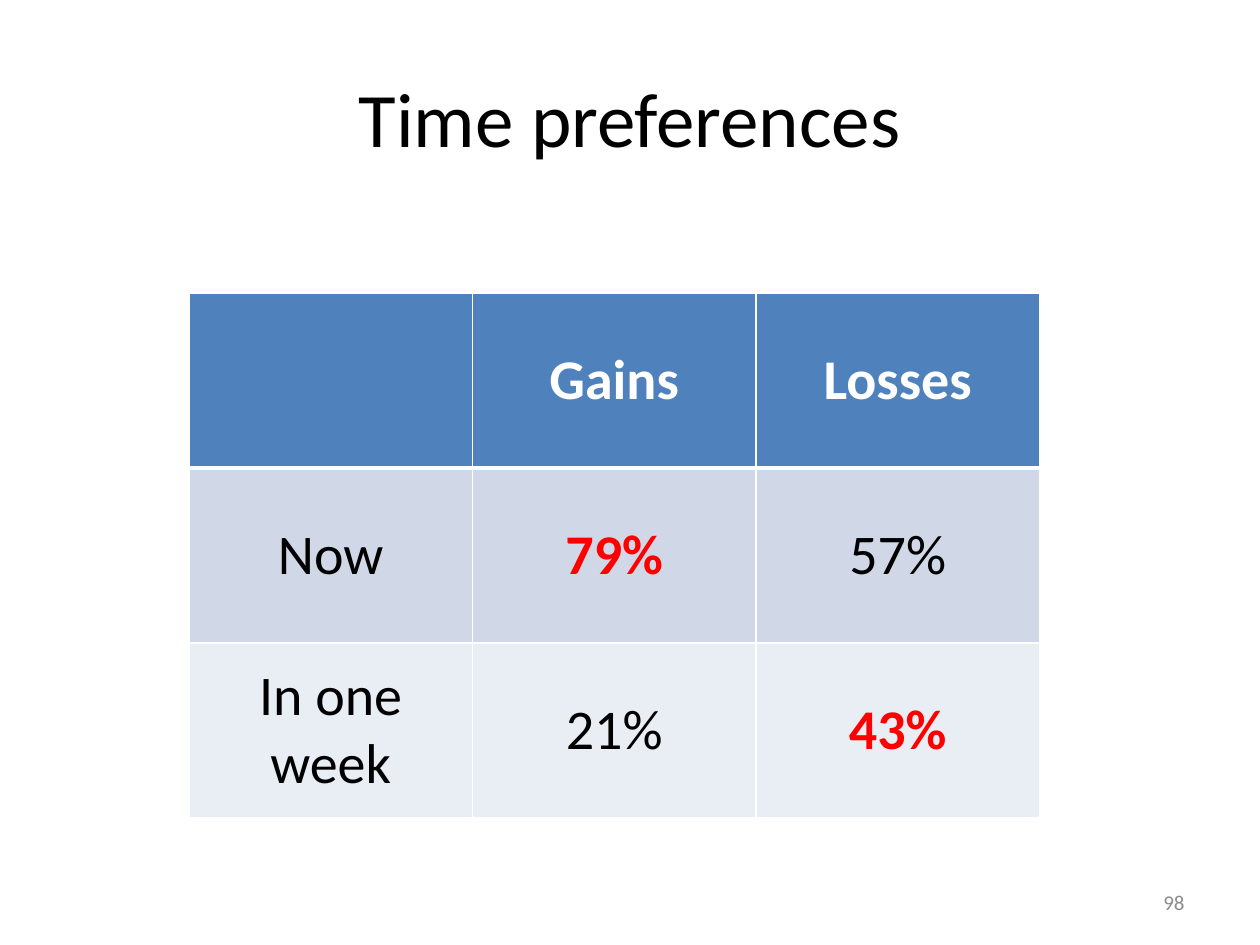
from lxml import etree
from pptx import Presentation
from pptx.dml.color import RGBColor
from pptx.enum.text import MSO_ANCHOR, PP_ALIGN
from pptx.oxml.ns import qn
from pptx.util import Inches, Pt

MIDDLE = MSO_ANCHOR.MIDDLE
CENTER, RIGHT = PP_ALIGN.CENTER, PP_ALIGN.RIGHT

WHITE, BLACK, RED, GREY = "FFFFFF", "000000", "FF0000", "8C8C8C"
ROW_FILLS = ["4F81BD", "D0D8E8", "E9EDF4"]
RESULTS = [
    ["", "Gains", "Losses"],
    ["Now", "79%", "57%"],
    ["In one week", "21%", "43%"],
]
MAJORITY_SHIFT = {"79%", "43%"}


def color(hex_string):
    return RGBColor.from_string(hex_string)


class SlideBuilder:
    """Holds the style and the current slide; boxes are shares of the slide's size."""

    font = "Calibri"

    def __init__(self, deck):
        self.width, self.height = deck.slide_width, deck.slide_height
        self.page = deck.slides.add_slide(deck.slide_layouts[6])

    def place(self, left, top, width, height):
        return (round(left * self.width), round(top * self.height),
                round(width * self.width), round(height * self.height))

    def style(self, para, size, hex_string, align, bold=False):
        para.alignment = align
        for span in para.runs:
            span.font.name = self.font
            span.font.size = Pt(size)
            span.font.bold = bold
            span.font.color.rgb = color(hex_string)

    def text(self, words, box, size, hex_string, align):
        frame = self.page.shapes.add_textbox(*self.place(*box)).text_frame
        frame.word_wrap = True
        frame.vertical_anchor = MIDDLE
        frame.text = words
        self.style(frame.paragraphs[0], size, hex_string, align)

    def border(self, cell, side, points):
        line = etree.SubElement(cell._tc.get_or_add_tcPr(), qn(f"a:ln{side}"), w=str(Pt(points)))
        fill = etree.SubElement(line, qn("a:solidFill"))
        etree.SubElement(fill, qn("a:srgbClr"), val=WHITE)

    def table(self, rows, box, size):
        """Draw rows with a bold header, a thick rule below it and red key figures."""
        table = self.page.shapes.add_table(len(rows), len(rows[0]), *self.place(*box)).table
        for r, row in enumerate(rows):
            for c, words in enumerate(row):
                cell = table.cell(r, c)
                cell.vertical_anchor = MIDDLE
                for side in "LRTB":
                    below_header = (r, side) in {(0, "B"), (1, "T")}
                    self.border(cell, side, 3 if below_header else 1)
                cell.fill.solid()
                cell.fill.fore_color.rgb = color(ROW_FILLS[r])
                cell.text = words
                key = words in MAJORITY_SHIFT
                ink = WHITE if r == 0 else RED if key else BLACK
                self.style(cell.text_frame.paragraphs[0], size, ink, CENTER, r == 0 or key)


def main():
    deck = Presentation()
    deck.slide_width, deck.slide_height = Inches(10), Inches(7.5)
    slide = SlideBuilder(deck)
    slide.text("Time preferences", (0.05, 0.04, 0.9, 1 / 6), 44, BLACK, CENTER)
    slide.table(RESULTS, (0.15, 0.31, 0.675, 5 / 9), 32)
    slide.text("98", (0.72, 0.93, 0.23, 0.05), 12, GREY, RIGHT)
    deck.save("out.pptx")


if __name__ == "__main__":
    main()
